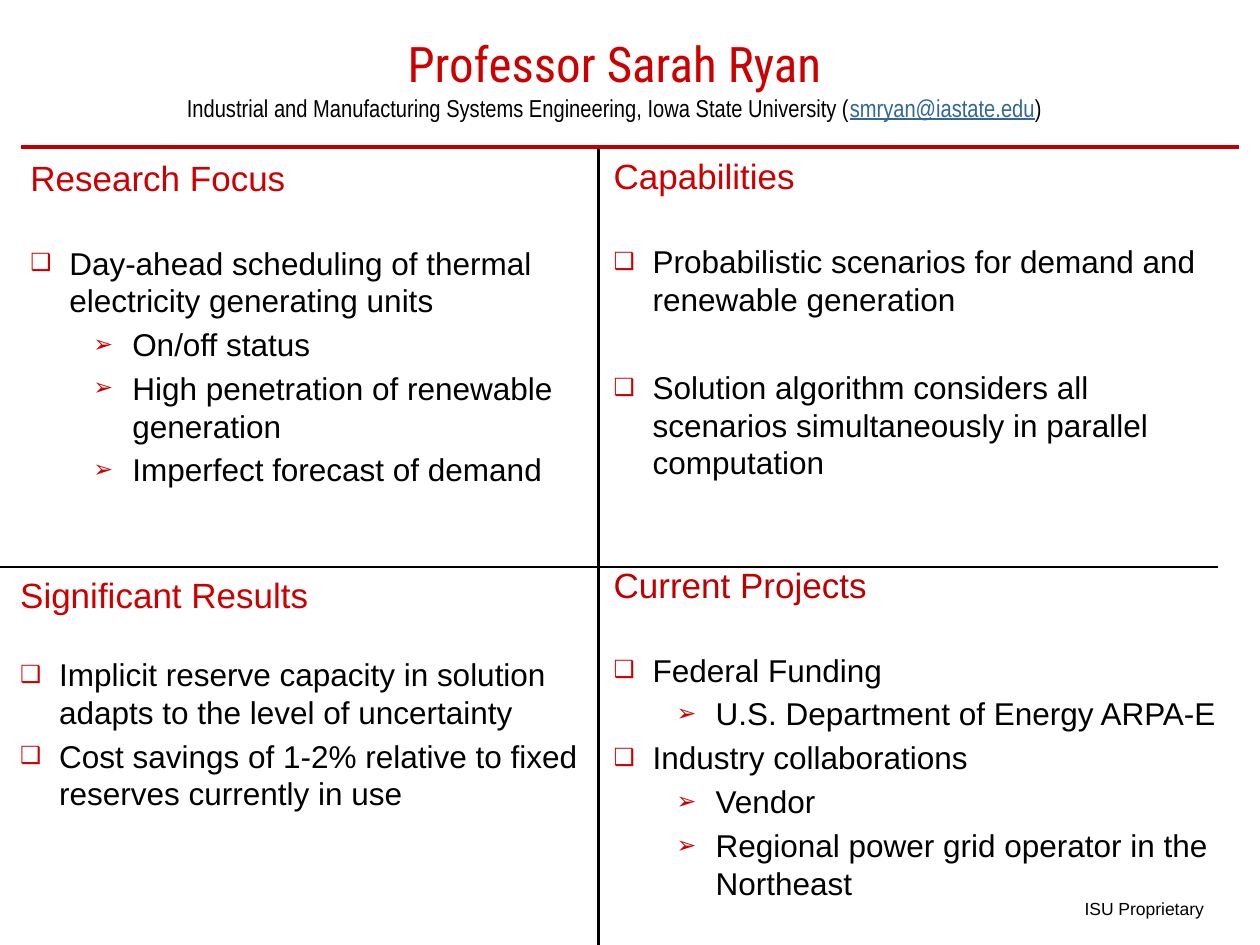
from dataclasses import dataclass

from lxml import etree
from pptx import Presentation
from pptx import util as u
from pptx.dml.color import RGBColor
from pptx.enum import shapes, text
from pptx.oxml.ns import qn


@dataclass(frozen=True)
class Theme:
    red: str = "CC0000"
    dark_red: str = "C00000"
    black: str = "000000"
    link: str = "336699"
    body_font: str = "Arial"
    title_font: str = "Roboto Condensed"
    subtitle_font: str = "Arial Narrow"
    title: float = 28
    subtitle: float = 14
    heading: float = 20
    body: float = 18
    footer: float = 10
    heading_line: float = 24
    body_line: float = 21.5
    item_gap: float = 3.6


@dataclass(frozen=True)
class Item:
    wording: str
    level: int = 0
    gap: float = Theme.item_gap


@dataclass(frozen=True)
class Quadrant:
    placeholder: int
    box: tuple[float, float, float, float]
    heading: str
    items: tuple[Item, ...]
    color: str = Theme.red


@dataclass(frozen=True)
class Rule:
    start: tuple[float, float]
    end: tuple[float, float]
    color: str = Theme.black
    width: float = 1.5


THEME = Theme()
BULLETS = ("❑", "➢")
HANGING = 0.31
LEVEL_STEP = 0.5
MIDDLE = 4.75

QUADRANTS = (
    Quadrant(1, (0.14, 1.19, 5.08, 3.16), "Research Focus", (
        Item("Day-ahead scheduling of thermal electricity generating units", gap=26),
        Item("On/off status", 1),
        Item("High penetration of renewable generation", 1),
        Item("Imperfect forecast of demand", 1),
    )),
    Quadrant(2, (4.77, 1.18, 5.08, 3.16), "Capabilities", (
        Item("Probabilistic scenarios for demand and renewable generation", gap=26),
        Item("Solution algorithm considers all scenarios simultaneously "
             "in parallel computation", gap=29),
    )),
    Quadrant(3, (0.06, 4.5, 4.83, 2.77), "Significant Results", (
        Item("Implicit reserve capacity in solution adapts to the level "
             "of uncertainty", gap=23),
        Item("Cost savings of 1-2% relative to fixed reserves currently in use"),
    )),
    Quadrant(4, (4.77, 4.42, 5.08, 2.85), "Current Projects", (
        Item("Federal Funding", gap=26),
        Item("U.S. Department of Energy ARPA-E", 1),
        Item("Industry collaborations"),
        Item("Vendor", 1),
        Item("Regional power grid operator in the Northeast", 1),
    ), THEME.dark_red),
)

RULES = (
    Rule((MIDDLE, 1.17), (MIDDLE, 7.5)),
    Rule((0.17, 1.17), (9.83, 1.17), THEME.dark_red, 2.25),
    Rule((0, 4.5), (MIDDLE, 4.5)),
    Rule((9.67, 4.5), (MIDDLE, 4.5)),
)


def set_font(font, name: str, size: float, color: str) -> None:
    font.name, font.size, font.bold = name, u.Pt(size), False
    font.color.rgb = RGBColor.from_string(color)


def place(shape, box: tuple[float, float, float, float]) -> None:
    shape.left, shape.top, shape.width, shape.height = map(u.Inches, box)


def set_bullet(para, level: int | None) -> None:
    """Give a list level its bullet and hanging indent; None means no bullet."""
    props = para._p.get_or_add_pPr()
    if level is None:
        props.set("marL", "0")
        props.set("indent", "0")
        etree.SubElement(props, qn("a:buNone"))
        return
    para.level = level
    props.set("marL", str(u.Inches(HANGING + level * LEVEL_STEP)))
    props.set("indent", str(u.Inches(-HANGING)))
    color = etree.SubElement(props, qn("a:buClr"))
    etree.SubElement(color, qn("a:srgbClr"), val=THEME.red)
    etree.SubElement(props, qn("a:buSzPct"), val="75000")
    etree.SubElement(props, qn("a:buChar"), char=BULLETS[level])


def add_title(page) -> None:
    title = page.shapes.title
    place(title, (0.25, 0.08, 9.25, 1.08))
    frame = title.text_frame
    frame.auto_size = text.MSO_AUTO_SIZE.NONE
    frame.vertical_anchor = text.MSO_ANCHOR.MIDDLE
    para = frame.paragraphs[0]
    para.alignment = text.PP_ALIGN.CENTER
    span = para.add_run()
    span.text = "Professor Sarah Ryan"
    set_font(span.font, THEME.title_font, THEME.title, THEME.red)
    para.add_line_break()
    for wording, color in (
        ("Industrial and Manufacturing Systems Engineering, Iowa State University (",
         THEME.black),
        ("smryan@iastate.edu", THEME.link),
        (")", THEME.black),
    ):
        span = para.add_run()
        span.text = wording
        set_font(span.font, THEME.subtitle_font, THEME.subtitle, color)
        span.font.underline = color == THEME.link


def add_quadrant(page, quadrant: Quadrant) -> None:
    body = page.placeholders[quadrant.placeholder]
    place(body, quadrant.box)
    frame = body.text_frame
    frame.auto_size = text.MSO_AUTO_SIZE.NONE
    frame.vertical_anchor = text.MSO_ANCHOR.TOP
    para = frame.paragraphs[0]
    para.text = quadrant.heading
    set_bullet(para, None)
    para.space_before, para.line_spacing = u.Pt(0), u.Pt(THEME.heading_line)
    set_font(para.font, THEME.body_font, THEME.heading, quadrant.color)
    for item in quadrant.items:
        para = frame.add_paragraph()
        para.text = item.wording
        set_bullet(para, item.level)
        para.space_before, para.line_spacing = u.Pt(item.gap), u.Pt(THEME.body_line)
        set_font(para.font, THEME.body_font, THEME.body, THEME.black)


def add_rule(page, rule: Rule) -> None:
    line = page.shapes.add_connector(
        shapes.MSO_CONNECTOR.STRAIGHT, *map(u.Inches, rule.start + rule.end))
    line.line.color.rgb = RGBColor.from_string(rule.color)
    line.line.width = u.Pt(rule.width)
    etree.SubElement(line._element.spPr, qn("a:effectLst"))


def add_footer(page) -> None:
    box = page.shapes.add_textbox(*map(u.Inches, (8.51, 7.08, 1.16, 0.27)))
    box.text_frame.word_wrap = False
    para = box.text_frame.paragraphs[0]
    para.text = "ISU Proprietary"
    set_font(para.font, THEME.body_font, THEME.footer, THEME.black)


def main() -> None:
    deck = Presentation()
    deck.slide_width, deck.slide_height = u.Inches(10), u.Inches(7.5)
    # The comparison layout has a title and four body placeholders
    page = deck.slides.add_slide(deck.slide_layouts[4])
    add_title(page)
    for quadrant in QUADRANTS:
        add_quadrant(page, quadrant)
    # Dividing lines
    for rule in RULES:
        add_rule(page, rule)
    add_footer(page)
    deck.save("out.pptx")


if __name__ == "__main__":
    main()
